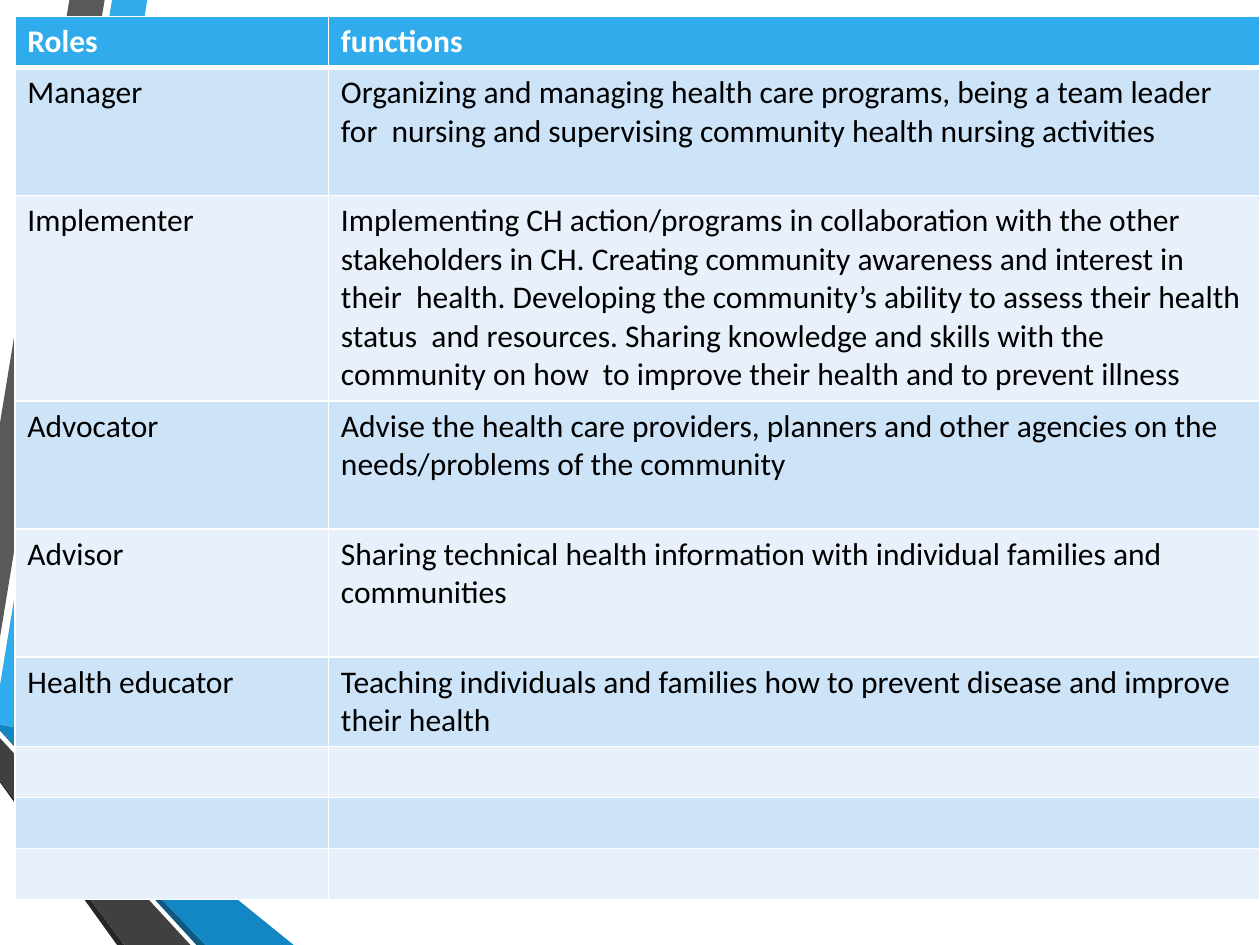
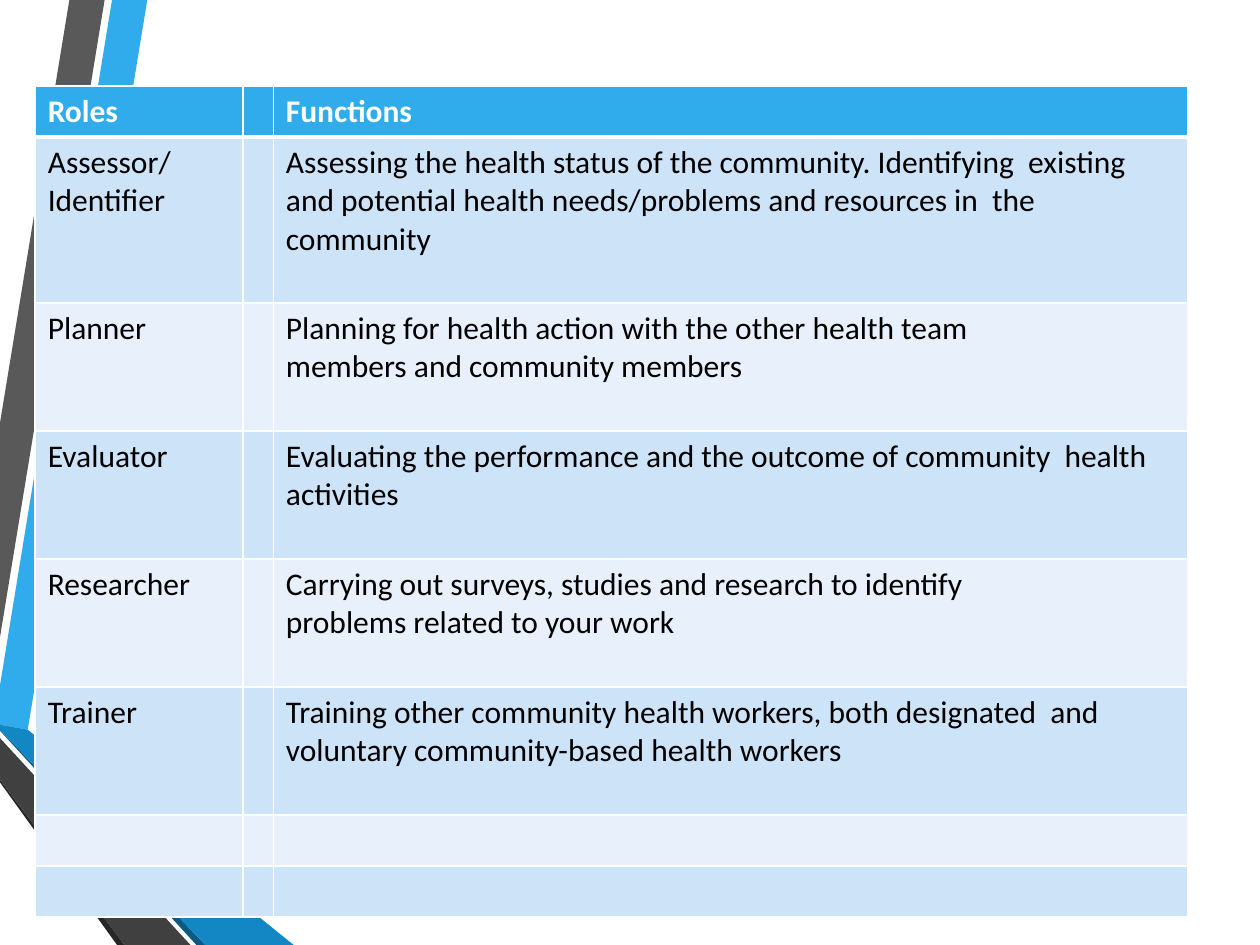
from lxml import etree
from pptx import Presentation
from pptx.dml.color import RGBColor
from pptx.oxml.ns import qn
from pptx.util import Cm, Pt

FONT = "Calibri"
TEXT_SIZE = Pt(18)
THIN, THICK = Pt(1), Pt(3)
COLOURS = {
    "blue": "30ACEC",
    "deep_blue": "1287C3",
    "blue_edge": "0C5A82",
    "grey": "595959",
    "dark_grey": "404040",
    "grey_edge": "262626",
    "odd_row": "CDE3F8",
    "even_row": "E8F1FB",
    "white": "FFFFFF",
    "black": "000000",
}

RIBBONS = [
    ("blue", [(0, 13.82), (0, 14.61), (0.56, 14.71), (2.97, 0), (2.26, 0)]),
    ("grey", [(2.11, 0), (1.4, 0), (0, 8.53), (0, 12.85)]),
    ("grey_edge", [(0, 15.72), (0, 15.77), (2.36, 19.05), (2.51, 19.05)]),
    ("blue_edge", [(0, 14.71), (0, 14.73), (3.96, 19.05), (4.14, 19.05)]),
    ("deep_blue", [(0, 14.71), (4.14, 19.05), (5.92, 19.05), (0.56, 14.71), (0, 14.61)]),
    ("dark_grey", [(0, 15.72), (2.51, 19.05), (3.84, 19.05), (0, 14.88)]),
]

TABLES = [
    {
        "corner": (0.3, 0.33),
        "columns": [6.32, 18.77],
        "heights": [1.03, 2.58, 4.14, 2.58, 2.58, 1.8, 1.03, 1.03, 1.03],
        "rows": [
            ("Roles", "functions"),
            ("Manager", "Organizing and managing health care programs, being a team leader "
                        "for  nursing and supervising community health nursing activities"),
            ("Implementer", "Implementing CH action/programs in collaboration with the other  "
                            "stakeholders in CH. Creating community awareness and interest in "
                            "their  health. Developing the community’s ability to assess their "
                            "health status  and resources. Sharing knowledge and skills with the "
                            "community on how  to improve their health and to prevent illness"),
            ("Advocator", "Advise the health care providers, planners and other agencies on "
                          "the  needs/problems of the community"),
            ("Advisor", "Sharing technical health information with individual families and  "
                        "communities"),
            ("Health educator", "Teaching individuals and families how to prevent disease and "
                                "improve  their health"),
        ],
    },
    {
        "corner": (0.71, 1.73),
        "columns": [4.19, 0.61, 18.44],
        "heights": [1.03, 3.35, 2.58, 2.58, 2.58, 2.58, 1.03, 1.03],
        "rows": [
            ("Roles", "", "Functions"),
            ("Assessor/Identifier", "", "Assessing the health status of the community. "
                                        "Identifying  existing and potential health "
                                        "needs/problems and resources in  the community"),
            ("Planner", "", "Planning for health action with the other health team\n"
                            "members and community members"),
            ("Evaluator", "", "Evaluating the performance and the outcome of community  "
                              "health activities"),
            ("Researcher", "", "Carrying out surveys, studies and research to identify\n"
                               "problems related to your work"),
            ("Trainer", "", "Training other community health workers, both designated  and "
                            "voluntary community-based health workers"),
        ],
    },
]


def colour(name):
    return RGBColor.from_string(COLOURS[name])


def add_ribbons(layout, page):
    for name, corners in RIBBONS:
        points = [(Cm(x), Cm(y)) for x, y in corners]
        builder = page.shapes.build_freeform(*points[0])
        builder.add_line_segments(points[1:], close=True)
        ribbon = builder.convert_to_shape()
        ribbon.shadow.inherit = False
        ribbon.fill.solid()
        ribbon.fill.fore_color.rgb = colour(name)
        ribbon.line.fill.background()
        layout.shapes.element.append(ribbon.element)


def set_borders(cell, top, bottom):
    properties = cell._tc.get_or_add_tcPr()
    for tag, width in (("lnL", THIN), ("lnR", THIN), ("lnT", top), ("lnB", bottom)):
        line = etree.SubElement(properties, qn(f"a:{tag}"), w=str(width))
        fill = etree.SubElement(line, qn("a:solidFill"))
        etree.SubElement(fill, qn("a:srgbClr"), val=COLOURS["white"])


def format_cell(cell, text, row_index):
    header = row_index == 0
    set_borders(cell, THICK if row_index == 1 else THIN, THICK if header else THIN)
    cell.fill.solid()
    band = "odd_row" if row_index % 2 else "even_row"
    cell.fill.fore_color.rgb = colour("blue" if header else band)
    cell.text = text
    for para in cell.text_frame.paragraphs:
        para.font.name = FONT
        para.font.size = TEXT_SIZE
        para.font.bold = header
        para.font.color.rgb = colour("white" if header else "black")


def add_roles_table(page, content):
    columns, heights, rows = content["columns"], content["heights"], content["rows"]
    left, top = content["corner"]
    table = page.shapes.add_table(
        len(heights), len(columns), Cm(left), Cm(top), Cm(sum(columns)), Cm(sum(heights))
    ).table
    for column, width in zip(table.columns, columns):
        column.width = Cm(width)
    blank_rows = [("",) * len(columns)] * (len(heights) - len(rows))
    for row_index, texts in enumerate(rows + blank_rows):
        table.rows[row_index].height = Cm(heights[row_index])
        for column_index, text in enumerate(texts):
            format_cell(table.cell(row_index, column_index), text, row_index)


def main():
    deck = Presentation()
    deck.slide_width, deck.slide_height = Cm(25.4), Cm(19.05)
    layout = deck.slide_layouts[6]
    pages = [deck.slides.add_slide(layout) for _ in TABLES]
    add_ribbons(layout, pages[0])
    for page, content in zip(pages, TABLES):
        add_roles_table(page, content)
    deck.save("out.pptx")


if __name__ == "__main__":
    main()
